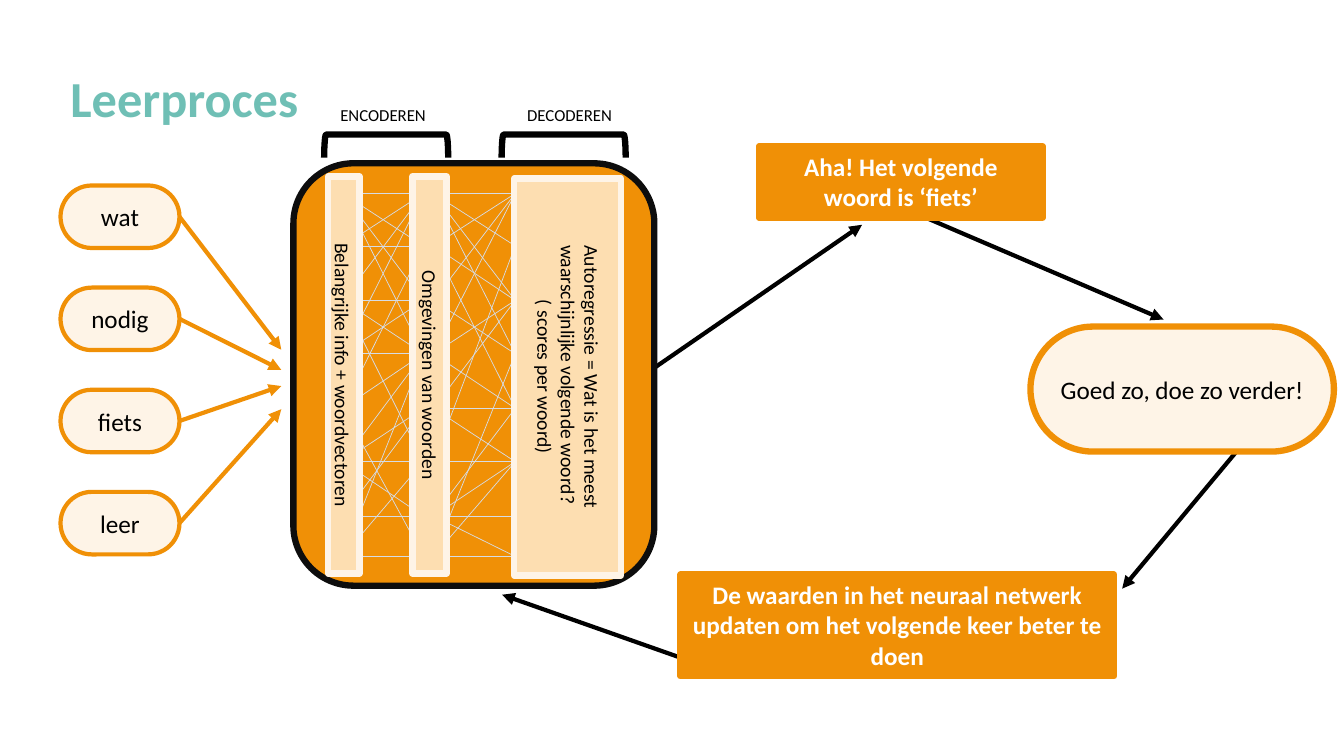
from lxml.etree import SubElement
from pptx import Presentation
from pptx.dml.color import RGBColor
from pptx.enum.shapes import MSO_CONNECTOR, MSO_SHAPE
from pptx.enum.text import MSO_ANCHOR, PP_ALIGN
from pptx.oxml.ns import qn
from pptx.util import Inches, Pt

ORANGE = RGBColor(0xF0, 0x90, 0x06)
CREAM = RGBColor(0xFE, 0xF4, 0xE7)
PEACH = RGBColor(0xFD, 0xDE, 0xB1)
BLACK = RGBColor(0, 0, 0)
NEAR_BLACK = RGBColor(0x0D, 0x0D, 0x0D)
WHITE = RGBColor(0xFF, 0xFF, 0xFF)
GREY = RGBColor(0xD6, 0xDC, 0xE5)
TEAL = RGBColor(0x6F, 0xBF, 0xB5)

# Heights of the neurons within a layer, and the neurons each one links to
NEURON_TOPS = [0.3, 0.82, 1.36, 1.89, 2.43, 2.96, 3.5, 3.9]
ENCODER_LINKS = [(0, 1, 2, 3), (0, 1), (0, 2, 3, 5), (0, 2, 3),
                 (1, 3, 7), (3, 4, 5, 6), (4, 6), (3, 5, 7)]
DECODER_LINKS = [(0, 1, 2, 3), (0, 2, 4), (0, 3), (0, 2, 4),
                 (2, 4, 5), (1, 5), (4, 5, 6, 7), (3, 5, 7)]


def write(shape, lines, size, color, bold=False, align=PP_ALIGN.CENTER,
          anchor=MSO_ANCHOR.TOP, top=0.05, side=0.1):
    frame = shape.text_frame
    frame.word_wrap = True
    frame.vertical_anchor = anchor
    frame.margin_top, frame.margin_bottom = Inches(top), Inches(0.05)
    frame.margin_left = frame.margin_right = Inches(side)
    for index, line in enumerate(lines):
        para = frame.add_paragraph() if index else frame.paragraphs[0]
        para.alignment = align
        span = para.add_run()
        span.text = line
        span.font.name = "Calibri"
        span.font.size = Pt(size)
        span.font.bold = bold
        span.font.color.rgb = color


def add_box(page, kind, box, fill, line, width=4.5):
    shape = page.shapes.add_shape(kind, *map(Inches, box))
    shape.shadow.inherit = False
    if fill is None:
        shape.fill.background()
    else:
        shape.fill.solid()
        shape.fill.fore_color.rgb = fill
    shape.line.color.rgb = line
    shape.line.width = Pt(width)
    SubElement(shape.line._get_or_add_ln(), qn("a:round"))
    return shape


def add_turned(page, kind, center, length, depth, fill, line):
    """A shape turned a quarter, so that its length runs downwards."""
    x, y = center
    shape = add_box(page, kind, (x - length / 2, y - depth / 2, length, depth), fill, line)
    shape.rotation = 90
    return shape


def add_text(page, box, text, size, color, **style):
    write(page.shapes.add_textbox(*map(Inches, box)), [text], size, color, **style)


def add_pill(page, box, text, width):
    pill = add_box(page, MSO_SHAPE.ROUNDED_RECTANGLE, box, CREAM, ORANGE, width)
    pill.adjustments[0] = 0.5
    write(pill, [text], 18, BLACK, anchor=MSO_ANCHOR.MIDDLE, side=0)


def add_line(page, start, end, color, width, arrow=False):
    line = page.shapes.add_connector(MSO_CONNECTOR.STRAIGHT, *map(Inches, start + end))
    line.line.color.rgb = color
    line.line.width = Pt(width)
    if arrow:
        SubElement(line.line._get_or_add_ln(), qn("a:tailEnd"), type="triangle")
    SubElement(line._element.spPr, qn("a:effectLst"))


def add_links(page, left, right, top, links):
    for source, targets in enumerate(links):
        for target in targets:
            add_line(page, (left, top + NEURON_TOPS[source]),
                     (right, top + NEURON_TOPS[target]), GREY, 0.5)


def add_network(page, box):
    left, top, width, height = box
    add_box(page, MSO_SHAPE.ROUNDED_RECTANGLE, box, ORANGE, NEAR_BLACK)
    add_links(page, left + 0.49, left + 1.29, top, ENCODER_LINKS)
    add_links(page, left + 1.39, left + 2.2, top, DECODER_LINKS)

    # Layers: centre, depth, space before the text, text
    layers = [
        (0.5, 2.1, 0.31, 0.05, ["Belangrijke info + woordvectoren"]),
        (1.35, 2.1, 0.34, 0.05, ["Omgevingen van woorden"]),
        (2.72, 2.12, 1.06, 0.17,
         ["Autoregressie = Wat is het meest waarschijnlijke volgende woord? ",
          "( scores per woord)"]),
    ]
    for x, y, depth, space, lines in layers:
        layer = add_turned(page, MSO_SHAPE.RECTANGLE, (left + x, top + y),
                           3.94, depth, PEACH, CREAM)
        write(layer, lines, 14, BLACK, top=space)

    # Brackets with their headings
    for bracket_x, heading_x, heading in [(0.92, 0.89, "ENCODEREN"),
                                          (2.68, 2.74, "DECODEREN")]:
        add_turned(page, MSO_SHAPE.LEFT_BRACKET, (left + bracket_x, top - 0.17),
                   0.23, 1.23, None, BLACK)
        add_text(page, (left + heading_x - 0.98, top - 0.63, 1.96, 0.3),
                 heading, 12, BLACK)


def add_words(page, box):
    left, top, width, height = box
    words = [("wat", 3.47), ("nodig", 3.67), ("fiets", 3.83), ("leer", 4.06)]
    pill_height = 0.62
    step = (height - pill_height) / (len(words) - 1)
    for index, (word, target) in enumerate(words):
        y = top + index * step
        add_pill(page, (left, y, width, pill_height), word, 3)
        add_line(page, (left + width, y + pill_height / 2),
                 (left + width + 1.01, target), ORANGE, 3, arrow=True)


def add_feedback_arrows(page):
    for start, end in [((6.85, 6.56), (4.98, 5.9)), ((12.33, 4.4), (11.13, 5.84)),
                       ((8.95, 2.06), (11.54, 3.17)), ((6.3, 3.78), (8.55, 2.23))]:
        add_line(page, start, end, BLACK, 3, arrow=True)


def add_step(page, box, text):
    write(add_box(page, MSO_SHAPE.RECTANGLE, box, ORANGE, ORANGE),
          [text], 18, WHITE, bold=True)


def main():
    deck = Presentation()
    deck.slide_width, deck.slide_height = Inches(13.33), Inches(7.5)
    page = deck.slides.add_slide(deck.slide_layouts[6])

    # Feedback loop
    add_feedback_arrows(page)
    add_pill(page, (10.22, 3.24, 3.01, 1.24), "Goed zo, doe zo verder!", 4.5)
    add_step(page, (6.75, 5.7, 4.3, 1.01),
             "De waarden in het neuraal netwerk updaten om het volgende keer beter te doen")
    add_step(page, (7.53, 1.45, 2.81, 0.71), "Aha! Het volgende woord is ‘fiets’")

    # Network and its input
    add_network(page, (2.91, 1.62, 3.58, 4.19))
    add_words(page, (0.6, 1.84, 1.18, 3.66))

    # Title
    add_text(page, (0.6, 0.62, 11.53, 0.71), "Leerproces", 36, TEAL,
             bold=True, align=PP_ALIGN.LEFT)

    deck.save("out.pptx")


if __name__ == "__main__":
    main()
